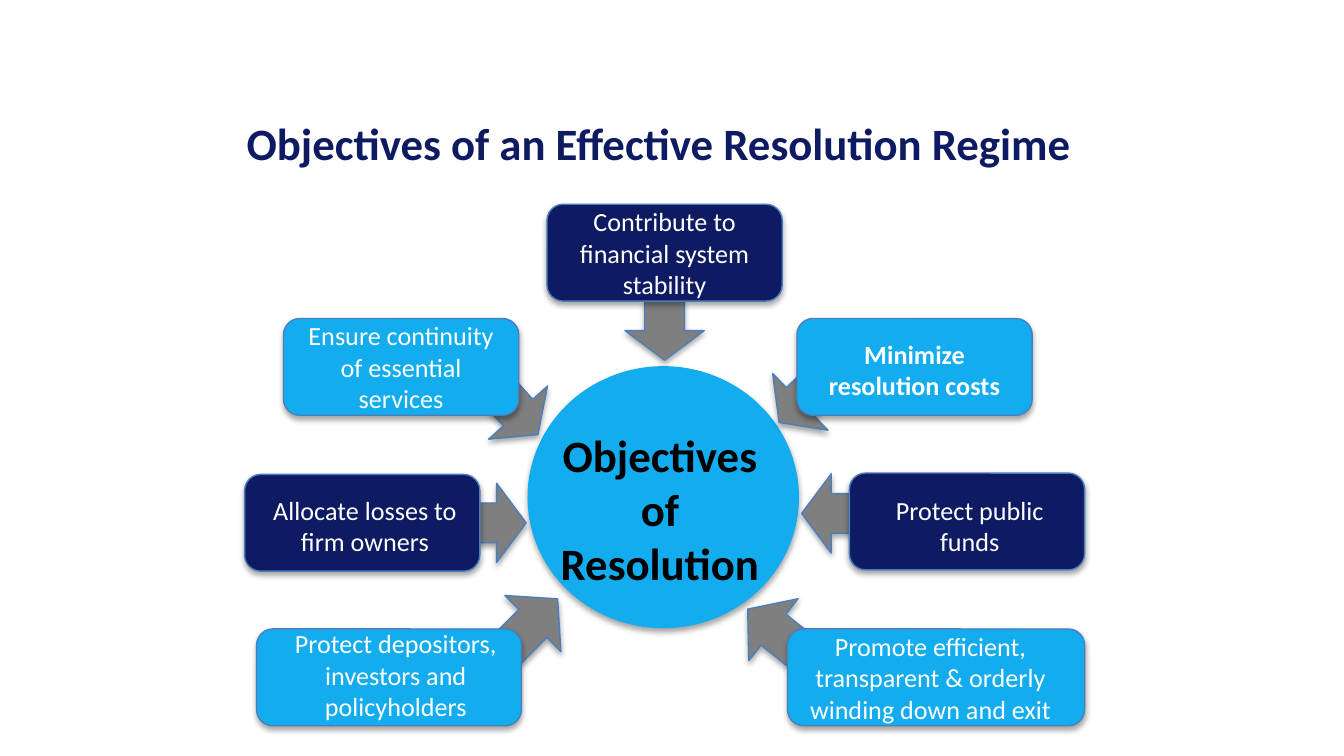
import pptx
import pptx.dml.color
import pptx.enum.shapes
import pptx.enum.text
import pptx.oxml
import pptx.oxml.ns
import pptx.util

SHAPE = pptx.enum.shapes.MSO_SHAPE
COLORS = {
    "navy": "0E1B62",
    "sky": "13ACEF",
    "gray": "7F7F7F",
    "edge": "4B7EBC",
    "black": "000000",
    "white": "FFFFFF",
}
CELL = 0.1  # grid cell in inches: the slide is 100 columns wide
BOX_HEIGHT = 7.2
ARROW_WIDTH = 5.9

# Text, left column, top row, width, fill, and format of the text
OBJECTIVES = [
    ("Ensure continuity of essential services", 21.1, 23.7, 17.5, "sky", {}),
    ("Minimize resolution costs", 59.3, 23.7, 17.5, "sky", {"bold": True, "drop": 0.02}),
    ("Protect depositors, investors and policyholders",
     19.1, 46.8, 19.7, "sky", {"shift": 0.05, "drop": -0.02}),
    ("Promote efficient, transparent & orderly winding down and exit",
     58.6, 46.8, 22.1, "sky", {"shift": -0.04}),
    ("Allocate losses to firm owners",
     18.2, 35.3, 17.5, "navy", {"shift": 0.02, "drop": 0.02}),
    ("Protect public funds", 63.2, 35.2, 17.5, "navy", {"shift": 0.02, "drop": 0.03}),
    ("Contribute to financial system stability", 40.7, 15.2, 17.5, "navy", {}),
]
# Left column, top row, height, rotation; in the order of the objectives
ARROWS = [
    (35.6, 28.5, 4.4, 317.9),
    (56.6, 27.7, 4.4, 45.7),
    (36.7, 43.8, 5.2, 225),
    (54.6, 44.4, 4.9, 128.6),
    (34, 36.7, 4.4, 270),
    (58.9, 36, 4.4, 90),
    (46.5, 22.4, 4.4, 0),
]


def rgb(name):
    return pptx.dml.color.RGBColor.from_string(COLORS[name])


def write(frame, text, size=14, color="white", bold=False, shift=0, drop=0):
    """Fill a frame with centred lines, moved right by shift and down by drop."""
    frame.word_wrap = True
    frame.vertical_anchor = pptx.enum.text.MSO_ANCHOR.MIDDLE
    frame.margin_left = pptx.util.Inches(0.1 + max(2 * shift, 0))
    frame.margin_right = pptx.util.Inches(0.1 + max(-2 * shift, 0))
    frame.margin_top = pptx.util.Inches(max(2 * drop, 0))
    frame.margin_bottom = pptx.util.Inches(max(-2 * drop, 0))
    for index, line in enumerate(text.split("\n")):
        para = frame.add_paragraph() if index else frame.paragraphs[0]
        para.alignment = pptx.enum.text.PP_ALIGN.CENTER
        para.space_before = pptx.util.Pt(0)
        span = para.add_run()
        span.text = line
        span.font.name = "Calibri"
        span.font.size = pptx.util.Pt(size)
        span.font.bold = bold
        span.font.color.rgb = rgb(color)


class Diagram:
    """Holds the current slide and the style of its elements."""

    def __init__(self, slide):
        self.slide = slide

    def cells(self, *lengths):
        return [pptx.util.Inches(length * CELL) for length in lengths]

    def title(self, text, *place):
        title = self.slide.shapes.title
        title.left, title.top, title.width, title.height = self.cells(*place)
        write(title.text_frame, text, size=24, color="navy", bold=True)

    def shape(self, kind, *place, fill, line="edge"):
        shape = self.slide.shapes.add_shape(kind, *self.cells(*place))
        shape.fill.solid()
        shape.fill.fore_color.rgb = rgb(fill)
        shape.line.color.rgb = rgb(line)
        shape.line.width = pptx.util.Pt(0.75)
        self.shadow(shape)
        return shape

    def shadow(self, shape):
        shape.shadow.inherit = False
        effects = shape._element.spPr.find(pptx.oxml.ns.qn("a:effectLst"))
        effects.append(pptx.oxml.parse_xml(
            f'<a:outerShdw {pptx.oxml.ns.nsdecls("a")} blurRad="{pptx.util.Pt(3.1)}" '
            f'dist="{pptx.util.Pt(1.8)}" dir="5400000" rotWithShape="0">'
            f'<a:srgbClr val="{COLORS["black"]}"><a:alpha val="35000"/></a:srgbClr>'
            '</a:outerShdw>'))

    def arrow(self, left, top, height, rotation):
        arrow = self.shape(SHAPE.DOWN_ARROW, left, top, ARROW_WIDTH, height, fill="gray")
        arrow.rotation = rotation

    def box(self, text, left, top, width, fill, style):
        box = self.shape(SHAPE.ROUNDED_RECTANGLE, left, top, width, BOX_HEIGHT, fill=fill)
        write(box.text_frame, text, **style)

    def label(self, text, *place, **style):
        label = self.slide.shapes.add_textbox(*self.cells(*place))
        write(label.text_frame, text, **style)


def main():
    deck = pptx.Presentation()
    deck.slide_width = pptx.util.Inches(10)
    deck.slide_height = deck.slide_width * 9 // 16
    diagram = Diagram(deck.slides.add_slide(deck.slide_layouts[5]))

    # Title
    diagram.title("Objectives of an Effective Resolution Regime", 1.1, 8.1, 95.8, 5)

    # Hub
    diagram.shape(SHAPE.OVAL, 39.3, 27.3, 20.1, 19.4, fill="sky", line="sky")
    diagram.label("Objectives\nof\nResolution", 37.5, 31.3, 23.2, 13.1,
                  size=24, color="black", bold=True)

    # Objectives around the hub, each box over its arrow
    for arrow, objective in zip(ARROWS, OBJECTIVES):
        diagram.arrow(*arrow)
        diagram.box(*objective)

    deck.save("out.pptx")


if __name__ == "__main__":
    main()
